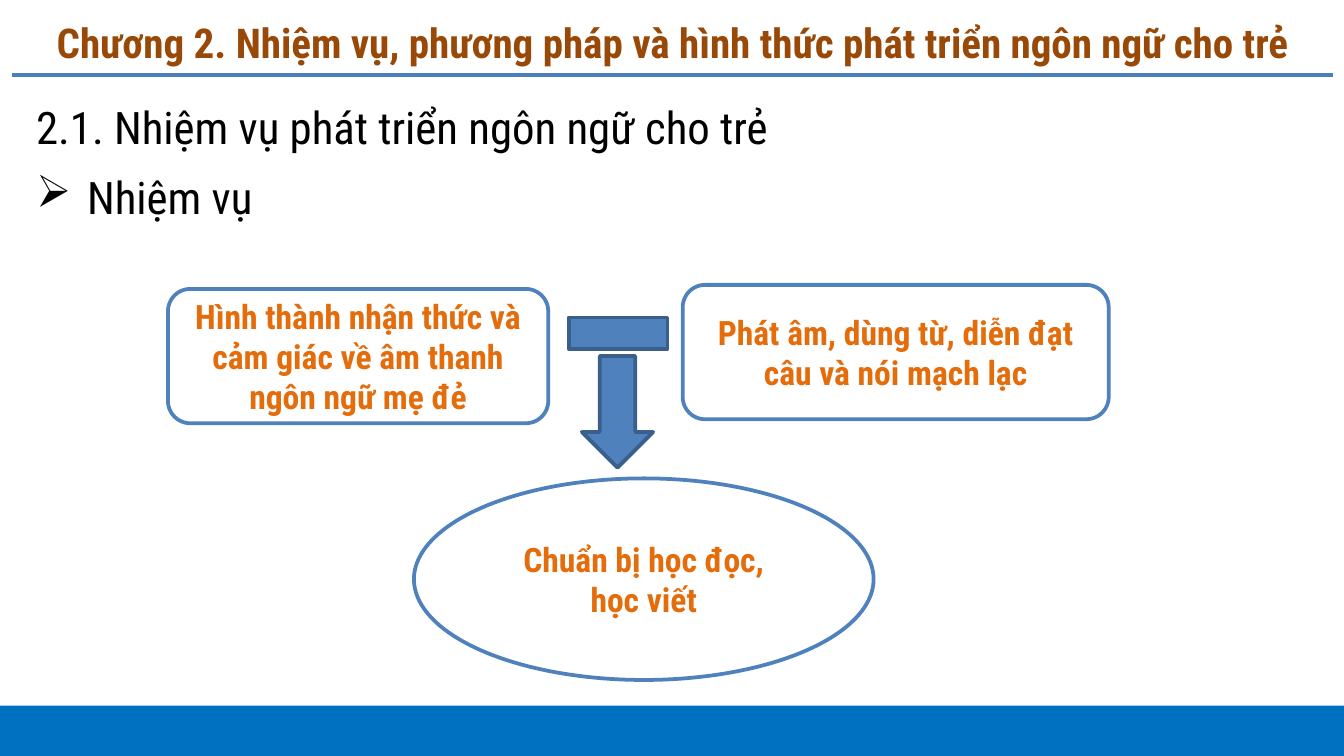
from lxml import etree
from pptx import Presentation
from pptx.dml.color import RGBColor
from pptx.enum.shapes import MSO_CONNECTOR, MSO_SHAPE as Shape
from pptx.enum.text import MSO_ANCHOR as Anchor, PP_ALIGN as Align
from pptx.oxml.ns import qn
from pptx.util import Inches, Pt

FONT = "Roboto Condensed"
BLUE, ORANGE, WHITE = "4F81BD", "E46C0A", "FFFFFF"


def color(value):
    return RGBColor.from_string(value)


def write(frame, lines, size, ink, bold=False, align=Align.CENTER, anchor=Anchor.MIDDLE):
    frame.word_wrap = True
    frame.vertical_anchor = anchor
    for index, line in enumerate(lines):
        para = frame.paragraphs[0] if index == 0 else frame.add_paragraph()
        para.text = line
        para.alignment = align
        para.font.name = FONT
        para.font.size = Pt(size)
        para.font.bold = bold
        para.font.color.rgb = color(ink)
    return frame.paragraphs


def add_text(page, place, lines, size, ink, **style):
    box = page.shapes.add_textbox(*map(Inches, place))
    return write(box.text_frame, lines, size, ink, **style)


def add_figure(page, kind, place, fill, line=None):
    figure = page.shapes.add_shape(kind, *map(Inches, place))
    figure.shadow.inherit = False
    figure.fill.solid()
    figure.fill.fore_color.rgb = color(fill)
    if line:
        figure.line.color.rgb = color(line)
        figure.line.width = Pt(2)
    else:
        figure.line.fill.background()
    return figure


def add_task(page, kind, place, lines):
    task = add_figure(page, kind, place, WHITE, BLUE)
    write(task.text_frame, lines, 18, ORANGE, bold=True)


def add_rule(page, left, right, top, ink):
    ends = map(Inches, (left, top, right, top))
    rule = page.shapes.add_connector(MSO_CONNECTOR.STRAIGHT, *ends)
    rule.line.color.rgb = color(ink)
    rule.line.width = Pt(2)
    etree.SubElement(rule._element.spPr, qn("a:effectLst"))


def add_bullet(para, mark, indent):
    props = para._p.get_or_add_pPr()
    props.set("marL", str(Inches(indent)))
    props.set("indent", str(-Inches(indent)))
    bullet = etree.Element(qn("a:buChar"), char=mark)
    props.find(qn("a:defRPr")).addprevious(bullet)


def add_outline(page):
    paras = add_text(
        page, (0.17, 0.65, 9.67, 4.45),
        ["2.1. Nhiệm vụ phát triển ngôn ngữ cho trẻ", "Nhiệm vụ"],
        24, "000000", align=Align.JUSTIFY, anchor=Anchor.TOP)
    for para in paras:
        para.line_spacing = 1.1
        para.space_before = Pt(6)
    add_bullet(paras[1], "➢", 0.38)


def main():
    deck = Presentation()
    deck.slide_width = Inches(10)
    deck.slide_height = Inches(10) * 9 // 16
    page = deck.slides.add_slide(deck.slide_layouts[6])

    add_figure(page, Shape.RECTANGLE, (-0.04, 5.25, 10.08, 0.38), "0070C0")
    add_rule(page, 0.09, 9.92, 0.56, "4B7EBC")
    add_text(page, (0.17, 0.06, 9.67, 0.51),
             ["Chương 2. Nhiệm vụ, phương pháp và hình thức phát triển ngôn ngữ cho trẻ"],
             22, "984807", bold=True)
    add_outline(page)

    add_task(page, Shape.ROUNDED_RECTANGLE, (1.25, 2.15, 2.83, 1),
             ["Hình thành nhận thức và cảm giác về âm thanh ngôn ngữ mẹ đẻ"])
    add_task(page, Shape.ROUNDED_RECTANGLE, (5.08, 2.12, 3.17, 1),
             ["Phát âm, dùng từ, diễn đạt câu và nói mạch lạc"])
    add_task(page, Shape.OVAL, (3.08, 3.56, 3.42, 1.5),
             ["Chuẩn bị học đọc,", "học viết"])

    add_figure(page, Shape.MATH_MINUS, (4.1, 1.98, 1, 1), BLUE, "3A5F8C")
    add_figure(page, Shape.DOWN_ARROW, (4.33, 2.65, 0.53, 0.83), BLUE, "3A5F8C")
    deck.save("out.pptx")


if __name__ == "__main__":
    main()
